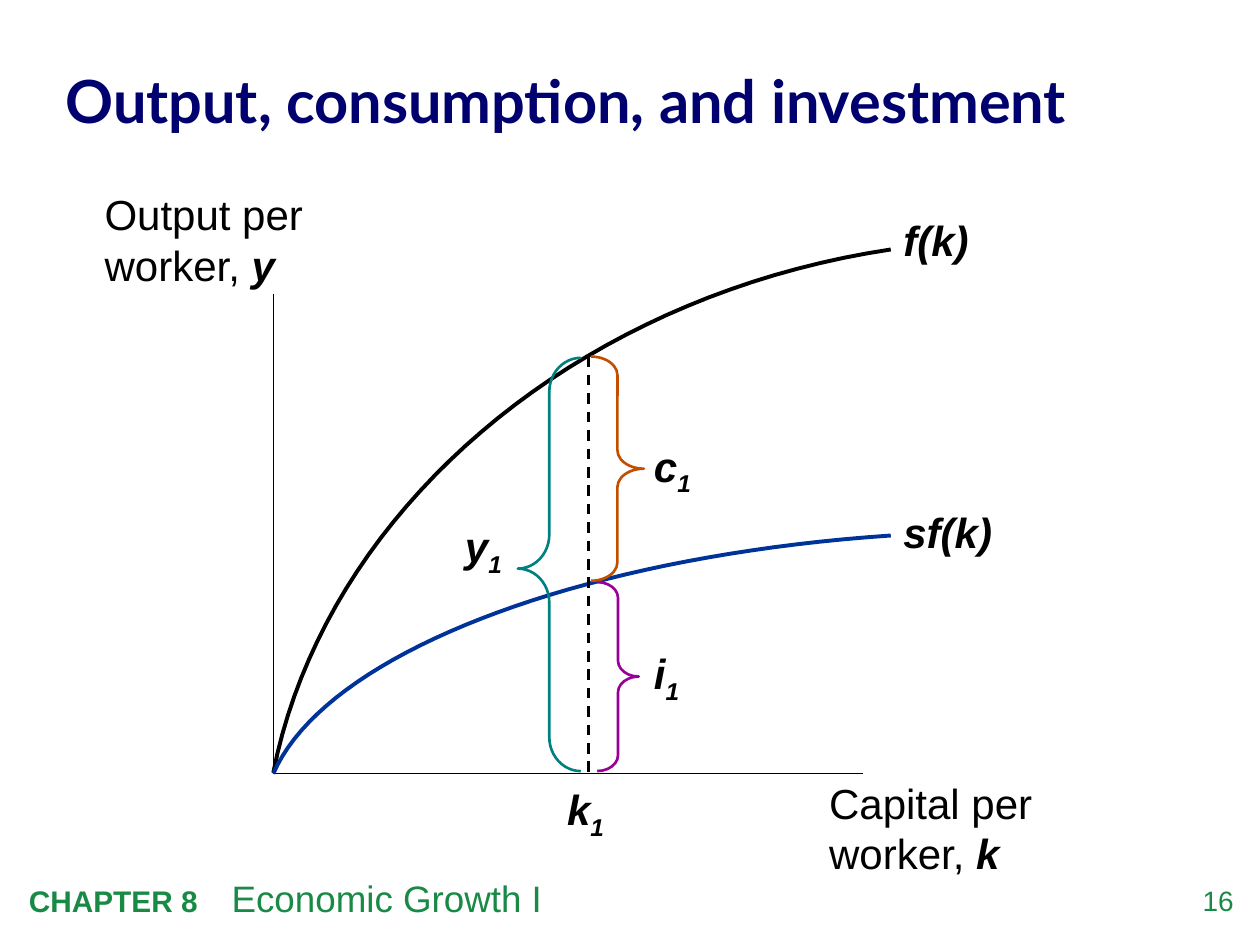
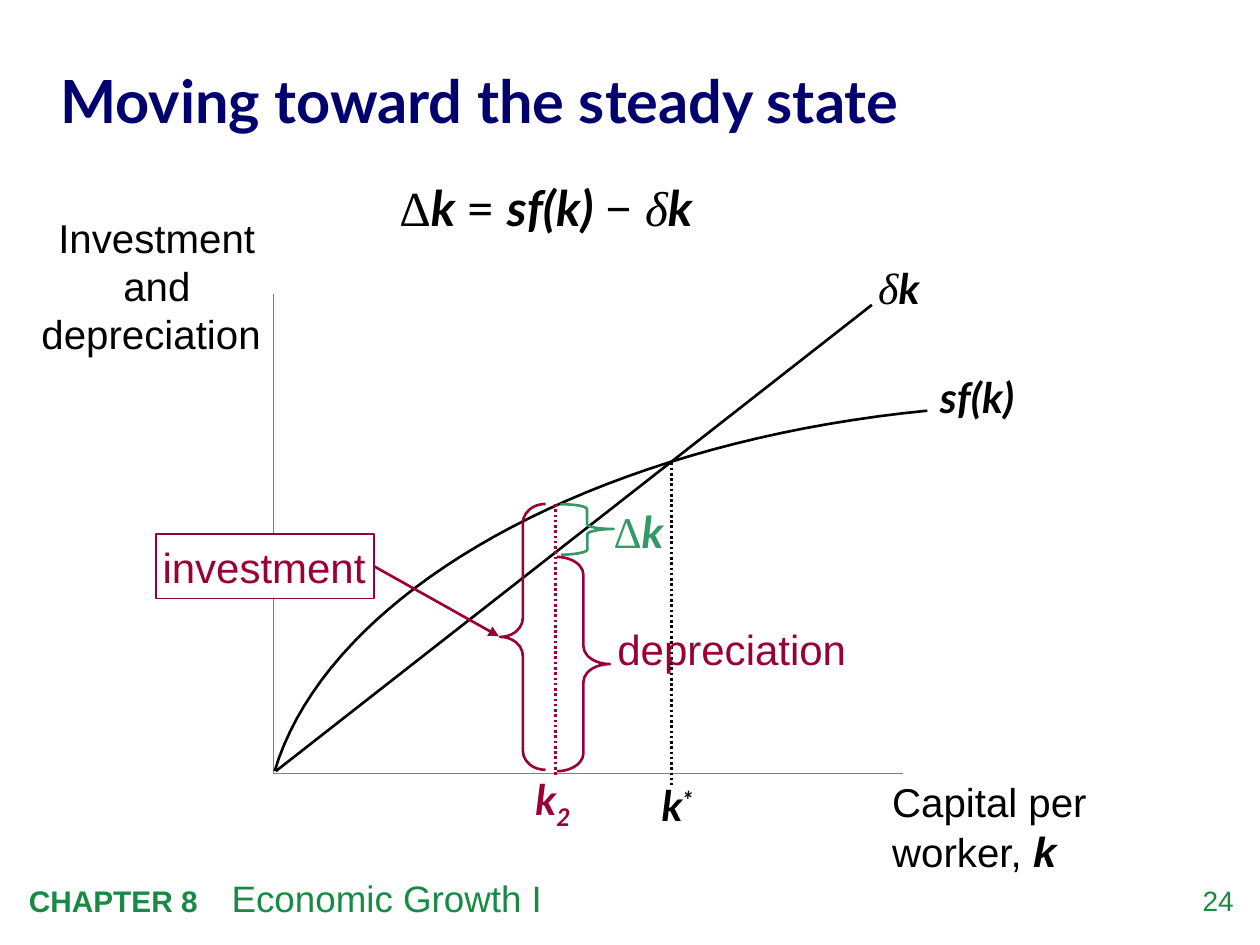
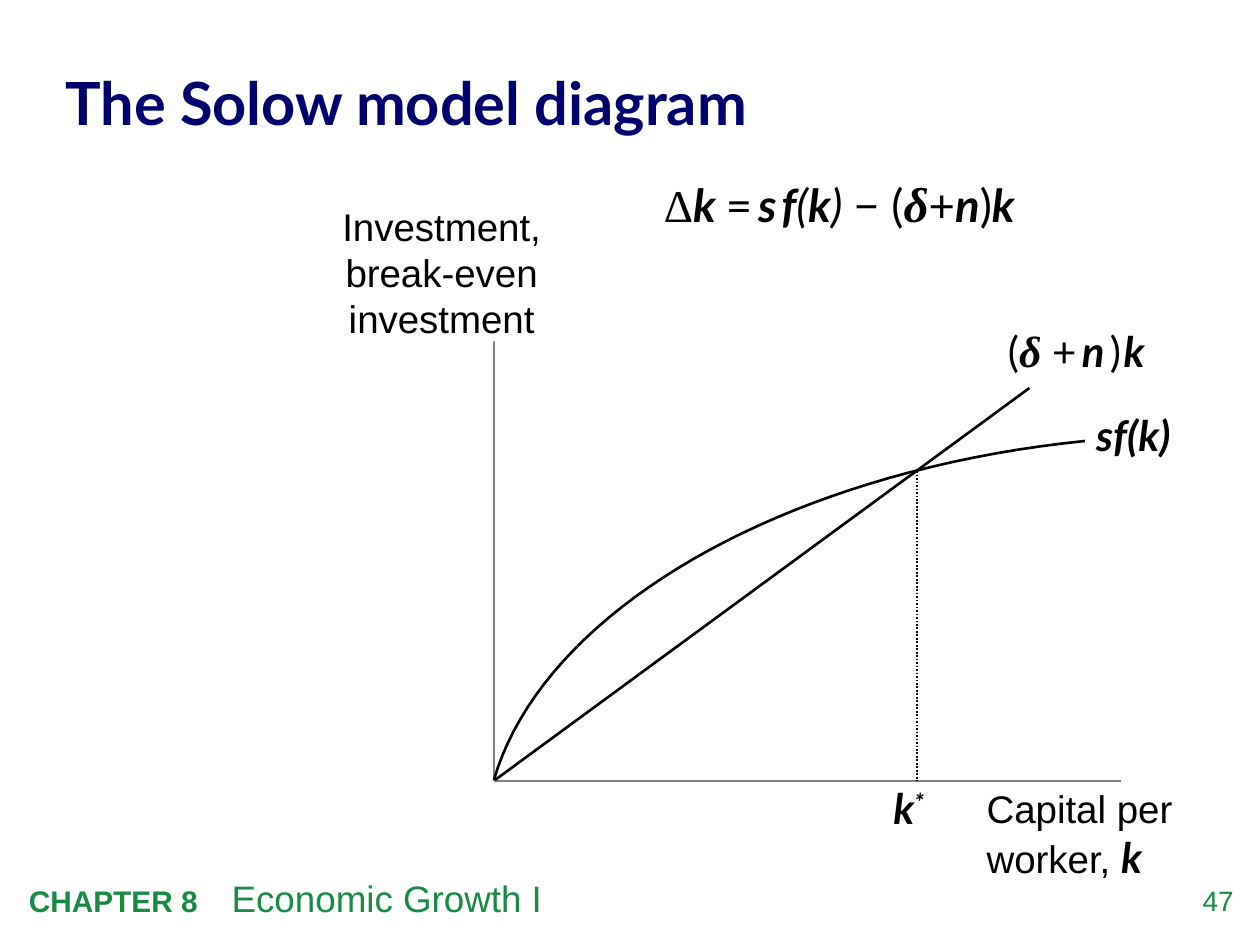
import pptx
import pptx.dml.color
import pptx.enum.dml
import pptx.enum.shapes
import pptx.enum.text
import pptx.oxml.ns
import pptx.util
from collections import namedtuple
from lxml import etree

Inches, Pt = pptx.util.Inches, pptx.util.Pt
RGBColor = pptx.dml.color.RGBColor
DASH = pptx.enum.dml.MSO_LINE.DASH
DOT = pptx.enum.dml.MSO_LINE.ROUND_DOT
SHAPE = pptx.enum.shapes.MSO_SHAPE
STRAIGHT = pptx.enum.shapes.MSO_CONNECTOR.STRAIGHT
MIDDLE = pptx.enum.text.MSO_ANCHOR.MIDDLE
TOP = pptx.enum.text.MSO_ANCHOR.TOP
LEFT = pptx.enum.text.PP_ALIGN.LEFT
CENTER = pptx.enum.text.PP_ALIGN.CENTER
RIGHT = pptx.enum.text.PP_ALIGN.RIGHT
qn = pptx.oxml.ns.qn

BLACK = RGBColor(0x00, 0x00, 0x00)
WHITE = RGBColor(0xFF, 0xFF, 0xFF)
GRAY = RGBColor(0x80, 0x80, 0x80)
NAVY = RGBColor(0x00, 0x00, 0x6E)
FOOTER_GREEN = RGBColor(0x19, 0x8A, 0x46)
BLUE = RGBColor(0x00, 0x33, 0x99)
TEAL = RGBColor(0x00, 0x80, 0x80)
PURPLE = RGBColor(0x99, 0x00, 0x99)
ORANGE = RGBColor(0xC2, 0x4F, 0x00)
CRIMSON = RGBColor(0x99, 0x00, 0x33)
GREEN = RGBColor(0x33, 0x99, 0x66)
ARIAL, LATO, TIMES = "Arial", "Lato", "Times New Roman"

Run = namedtuple("Run", "text font size bold italic baseline")


def plain(text, size=24, font=ARIAL):
    return Run(text, font, size, False, False, 0)


def variable(text, font=ARIAL, size=24, baseline=0):
    return Run(text, font, size, True, True, baseline)


def greek(text, size, bold=False, italic=True):
    return Run(text, TIMES, size, bold, italic, 0)


def indexed(letter, index, font=ARIAL, baseline=-25):
    return [variable(letter, font), variable(index, font, baseline=baseline)]


def capital_label(size, font=ARIAL):
    return [plain("Capital per\nworker, ", size), variable("k", font)]


SAVING = [variable("sf(k)", LATO)]
STEADY_CAPITAL = indexed("k", "*", LATO, 30)
SOLOW_EQUATION = [
    greek("Δ", 26, italic=False), variable("k ", LATO, 26), plain("=", 26, LATO),
    plain(" ", 13, LATO), variable("s", LATO, 26), variable(" ", LATO, 12),
    variable("f", LATO, 26), Run("(", LATO, 26, False, True, 0), variable("k", LATO, 26),
    Run(") ", LATO, 26, False, True, 0), plain("− (", 26, LATO), greek("δ", 28, bold=True),
    plain("+", 26, LATO), variable("n", LATO, 26), plain(")", 26, LATO),
    variable("k", LATO, 26)]

# axes: origin, top of the vertical axis, right end of the horizontal axis, colour
# curves: right end, origin, colour, width
# lines: from, to, colour, width, dash
# labels: box, runs, then options
# braces: shape, box, adjustments, colour, rotation
SLIDES = [
    dict(
        number=16, title="Output, consumption, and investment",
        title_box=(0.52, 0.31, 9.01, 0.94),
        axes=((2.17, 6.14), 2.33, 6.85, BLACK),
        curves=[((7.07, 1.98), (2.17, 6.13), BLACK, 2.25),
                ((7.07, 4.25), (2.17, 6.14), BLUE, 2.25)],
        lines=[((4.67, 2.83), (4.67, 6.17), BLACK, 1.5, DASH)],
        labels=[
            ((0.83, 1.5, 1.75, 0.8), [plain("Output per\nworker, "), variable("y")], {}),
            ((6.58, 6.17, 1.75, 0.8), capital_label(24), {}),
            ((7.17, 1.7, 0.83, 0.4), [variable("f(k)")], {}),
            ((7.17, 4.02, 1.08, 0.4), [variable("sf(k)")], {}),
            ((4.5, 6.25, 0.58, 0.4), indexed("k", "1"), {}),
            ((3.69, 4.16, 0.58, 0.4), indexed("y", "1"), {}),
            ((5.19, 5.17, 0.58, 0.4), indexed("i", "1"), {}),
            ((5.19, 3.52, 0.58, 0.4), indexed("c", "1"), {})],
        braces=[
            (SHAPE.LEFT_BRACE, (4.11, 2.84, 0.5, 3.28), (0.54, 0.51), TEAL, 0),
            (SHAPE.RIGHT_BRACE, (4.74, 4.62, 0.33, 1.5), (0.38, 0.5), PURPLE, 0),
            (SHAPE.RIGHT_BRACE, (4.69, 2.83, 0.42, 1.78), (0.35, 0.5), ORANGE, 0)]),
    dict(
        number=24, title="Moving toward the steady state",
        title_box=(0.48, 0.3, 9.01, 0.96),
        axes=((2.17, 6.14), 2.33, 7.17, GRAY),
        curves=[((7.36, 3.26), (2.18, 6.12), BLACK, 1.5)],
        lines=[((2.19, 6.12), (6.92, 2.42), BLACK, 1.5, None),
               ((5.33, 3.67), (5.33, 6.23), BLACK, 1.5, DOT),
               ((4.41, 4), (4.41, 6.17), CRIMSON, 1.5, DOT)],
        labels=[
            ((0.24, 1.69, 2.01, 1.15), [plain("Investment and depreciation ", 23)],
             dict(align=CENTER)),
            ((7.08, 6.17, 1.75, 0.78), capital_label(23), {}),
            ((7.46, 2.95, 0.88, 0.4), SAVING, {}),
            ((5.25, 6.19, 0.58, 0.4), STEADY_CAPITAL, {}),
            ((4.25, 6.17, 0.5, 0.4), indexed("k", "2", LATO), dict(color=CRIMSON)),
            ((4.9, 4.95, 1.83, 0.4), [plain("depreciation")], dict(color=CRIMSON, anchor=TOP)),
            ((4.87, 4.01, 0.58, 0.42),
             [greek("Δ", 25, italic=False), variable("k", LATO, 25)],
             dict(color=GREEN, anchor=TOP)),
            ((3.17, 1.41, 3.4, 0.47),
             [greek("Δ", 28, italic=False), variable("k ", LATO, 28), plain("= ", 28, LATO),
              variable("sf(k) ", LATO, 28), plain("− ", 28, LATO), greek("δ", 28),
              variable("k", LATO, 28)], {}),
            ((6.97, 2.07, 0.58, 0.42), [greek("δ", 25), variable("k", LATO)], {})],
        braces=[
            (SHAPE.LEFT_BRACE, (3.97, 4, 0.36, 2.11), (0.42, 0.5), CRIMSON, 0),
            (SHAPE.LEFT_BRACE, (4.42, 4.42, 0.42, 1.7), (0.34, 0.5), CRIMSON, 180),
            (SHAPE.LEFT_BRACE, (4.45, 4, 0.42, 0.4), (0.1, 0.5), GREEN, 179.3)],
        callout=((1.24, 4.24, 1.73, 0.51), "investment", (3.96, 5.05), CRIMSON)),
    dict(
        number=47, title="The Solow model diagram",
        title_box=(0.52, 0.34, 7.87, 0.9),
        axes=((3.92, 6.2), 2.37, 8.9, GRAY),
        curves=[((8.61, 3.5), (3.92, 6.19), BLACK, 1.5)],
        lines=[((3.93, 6.19), (8.17, 3.08), BLACK, 1.5, None),
               ((7.28, 3.74), (7.28, 6.2), BLACK, 1, DOT)],
        labels=[
            ((2.5, 1.61, 2.01, 1.1), [plain("Investment, break-even investment", 22)],
             dict(align=CENTER, fill=WHITE)),
            ((7.83, 6.23, 1.75, 0.77), capital_label(22, LATO), {}),
            ((8.7, 3.25, 1.04, 0.4), SAVING, {}),
            ((8, 2.57, 1.5, 0.42),
             [plain("(", font=LATO), greek("δ", 25, bold=True), greek(" ", 24, bold=True),
              plain("+", font=LATO), plain(" ", 12, LATO), variable("n", LATO),
              plain(" ", 12, LATO), plain(")", font=LATO), plain(" ", 6, LATO),
              variable("k", LATO)], {}),
            ((7.09, 6.21, 0.58, 0.4), STEADY_CAPITAL, {}),
            ((5.17, 1.33, 3.92, 0.57), SOLOW_EQUATION,
             dict(anchor=TOP, insets=(0.1, 0.05)))],
        braces=[]),
]

FOOTER_BOX = (0.13, 6.9, 8.18, 0.45)
FOOTER = [Run("CHAPTER 8\t", ARIAL, 17, True, False, 0), plain("Economic Growth I", 21)]
FOOTER_TAB = 1.61
NUMBER_BOX = (9.24, 7.01, 0.55, 0.32)
CURVE_STEPS = 40


def inches(values):
    return [Inches(value) for value in values]


def style_font(font, run):
    font.name, font.size = run.font, Pt(run.size)
    font.bold, font.italic = run.bold, run.italic


def write(shape, runs, color=BLACK, align=LEFT, anchor=MIDDLE, insets=(0, 0)):
    """Fill the shape with one paragraph; a newline in a run is a line break."""
    frame = shape.text_frame
    frame.word_wrap = True
    frame.vertical_anchor = anchor
    frame.margin_left = frame.margin_right = Inches(insets[0])
    frame.margin_top = frame.margin_bottom = Inches(insets[1])
    paragraph = frame.paragraphs[0]
    paragraph.alignment = align
    paragraph.font.color.rgb = color
    uniform = len({run[1:5] for run in runs}) == 1
    if uniform:
        style_font(paragraph.font, runs[0])
    for run in runs:
        for position, line in enumerate(run.text.split("\n")):
            if position:
                paragraph.add_line_break()
            piece = paragraph.add_run()
            piece.text = line
            if not uniform:
                style_font(piece.font, run)
            if run.baseline:
                piece._r.get_or_add_rPr().set("baseline", str(run.baseline * 1000))
    return paragraph


def add_label(slide, box, runs, fill=None, **options):
    label = slide.shapes.add_textbox(*inches(box))
    if fill is not None:
        label.fill.solid()
        label.fill.fore_color.rgb = fill
    return write(label, runs, **options)


def add_line(slide, start, end, color, width, dash=None, arrow=False):
    line = slide.shapes.add_connector(STRAIGHT, *inches(start + end))
    line.line.color.rgb = color
    line.line.width = Pt(width)
    if dash is not None:
        line.line.dash_style = dash
    if arrow:
        etree.SubElement(line.line._get_or_add_ln(), qn("a:tailEnd"), type="triangle")
    etree.SubElement(line._element.spPr, qn("a:effectLst"))
    return line


def outline(shape, color, width):
    shape.shadow.inherit = False
    shape.fill.background()
    shape.line.color.rgb = color
    shape.line.width = Pt(width)


def add_curve(slide, end, origin, color, width):
    """Draw a concave cubic curve whose bend scales with its extent."""
    run, rise = end[0] - origin[0], origin[1] - end[1]
    controls = [end,
                (end[0] - 0.518 * run, end[1] + 0.092 * rise),
                (origin[0] + 0.082 * run, origin[1] - 0.494 * rise),
                origin]
    points = []
    for step in range(CURVE_STEPS + 1):
        t = step / CURVE_STEPS
        weights = ((1 - t) ** 3, 3 * t * (1 - t) ** 2, 3 * t ** 2 * (1 - t), t ** 3)
        points.append([Inches(sum(w * c[axis] for w, c in zip(weights, controls)))
                       for axis in (0, 1)])
    builder = slide.shapes.build_freeform(*points[0])
    builder.add_line_segments(points[1:], close=False)
    outline(builder.convert_to_shape(), color, width)


def add_brace(slide, kind, box, adjustments, color, rotation):
    brace = slide.shapes.add_shape(kind, *inches(box))
    for index, value in enumerate(adjustments):
        brace.adjustments[index] = value
    brace.rotation = rotation
    outline(brace, color, 1.5)


def add_callout(slide, box, text, target, color):
    callout = slide.shapes.add_shape(SHAPE.RECTANGLE, *inches(box))
    outline(callout, color, 1)
    callout.fill.solid()
    callout.fill.fore_color.rgb = WHITE
    write(callout, [plain(text)], color, insets=(0.05, 0.05))
    left, top, width, height = box
    arrow = add_line(slide, (left + width, top + height / 2), target, color, 1.5, arrow=True)
    arrow.begin_connect(callout, 3)


def add_frame(slide, title, title_box, number):
    """Add the title, footer and slide number."""
    heading = slide.shapes.title
    heading.left, heading.top, heading.width, heading.height = inches(title_box)
    paragraph = write(heading, [Run(title, LATO, 34, True, False, 0)], NAVY)
    paragraph.line_spacing = 1.05

    footer = add_label(slide, FOOTER_BOX, FOOTER, color=FOOTER_GREEN, anchor=TOP,
                       insets=(0.1, 0.05))
    tabs = etree.Element(qn("a:tabLst"))
    etree.SubElement(tabs, qn("a:tab"), pos=str(Inches(FOOTER_TAB)), algn="l")
    footer._p.get_or_add_pPr().insert(0, tabs)
    add_label(slide, NUMBER_BOX, [plain(str(number), 16)], color=FOOTER_GREEN,
              align=RIGHT, anchor=TOP)


def add_diagram(slide, content):
    origin, top, right, color = content["axes"]
    add_line(slide, (origin[0], top), origin, color, 1)
    add_line(slide, origin, (right, origin[1]), color, 1)
    for curve in content["curves"]:
        add_curve(slide, *curve)
    for line in content["lines"]:
        add_line(slide, *line)
    for box, runs, options in content["labels"]:
        add_label(slide, box, runs, **options)
    if "callout" in content:
        add_callout(slide, *content["callout"])
    for brace in content["braces"]:
        add_brace(slide, *brace)


def main():
    deck = pptx.Presentation()
    deck.slide_width, deck.slide_height = Inches(10), Inches(7.5)
    title_only = deck.slide_layouts[5]
    for content in SLIDES:
        slide = deck.slides.add_slide(title_only)
        add_frame(slide, content["title"], content["title_box"], content["number"])
        add_diagram(slide, content)
    deck.save("out.pptx")


if __name__ == "__main__":
    main()
